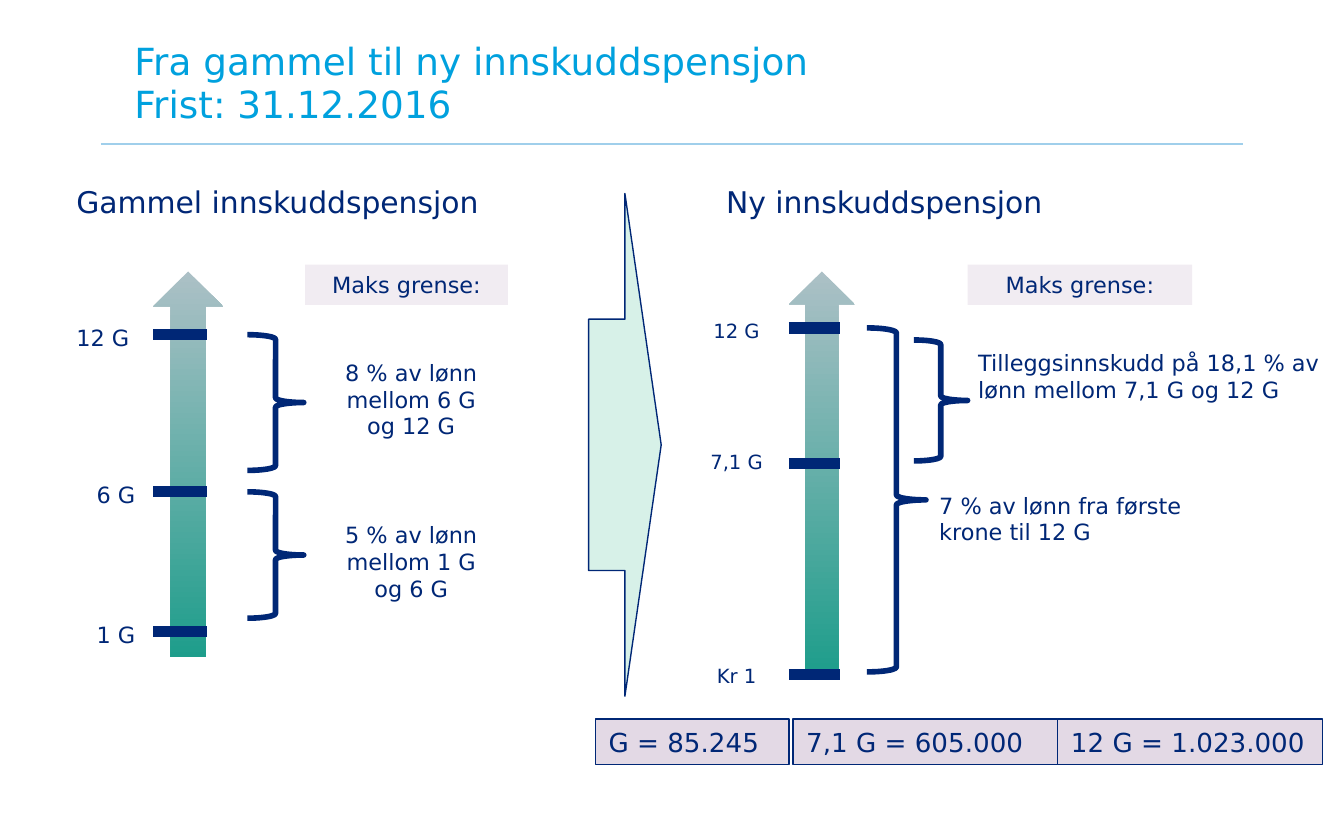
"""Build a slide comparing the old and new contribution pension limits."""
from lxml.etree import SubElement
from pptx import Presentation
from pptx.dml.color import RGBColor
from pptx.enum.shapes import MSO_CONNECTOR, MSO_SHAPE as SHAPE
from pptx.enum.text import MSO_ANCHOR as ANCHOR, MSO_AUTO_SIZE as FIT, PP_ALIGN as ALIGN
from pptx.oxml.ns import qn
from pptx.util import Inches, Pt

rgb = RGBColor.from_string
FONT, NAVY = "DejaVu Sans", "002776"


def add_label(parent, text, bounds, size=12, align=ALIGN.LEFT, fill=None, outline=None):
    place = [Inches(length) for length in bounds]
    if fill:
        label = parent.add_shape(SHAPE.RECTANGLE, *place)
        label.shadow.inherit = False
        label.fill.solid()
        label.fill.fore_color.rgb = rgb(fill)
        if outline:
            label.line.color.rgb = rgb(outline)
            label.line.width = Pt(0.75)
        else:
            label.line.fill.background()
    else:
        label = parent.add_textbox(*place)
    frame = label.text_frame
    frame.word_wrap = True
    frame.auto_size = FIT.SHAPE_TO_FIT_TEXT
    frame.vertical_anchor = ANCHOR.MIDDLE if fill else ANCHOR.TOP
    paragraph = frame.paragraphs[0]
    paragraph.alignment = align
    run = paragraph.add_run()
    run.text = text
    run.font.name, run.font.size = FONT, Pt(size)
    run.font.color.rgb = rgb(NAVY)


def add_rule(parent, left, right, y, color, width):
    rule = parent.add_connector(MSO_CONNECTOR.STRAIGHT, Inches(left), Inches(y), Inches(right), Inches(y))
    rule.line.color.rgb = rgb(color)
    rule.line.width = Pt(width)
    SubElement(rule._element.spPr, qn("a:effectLst"))


prs = Presentation()
prs.slide_width, prs.slide_height = Inches(10), Inches(6.25)
slide = prs.slides.add_slide(prs.slide_layouts[5])
add_rule(slide.shapes, 0.75, 9.25, 1.07, "A0CFEB", 1)

title = slide.shapes.title
title.left, title.top, title.width, title.height = Inches(0.72), Inches(0.31), Inches(7.61), Inches(0.5)
heading = title.text_frame
heading.auto_size = FIT.NONE
heading.vertical_anchor = ANCHOR.TOP
heading.margin_left = heading.margin_right = Inches(0.28)
heading.margin_top, heading.margin_bottom = 0, Inches(0.04)
heading_lines = heading.paragraphs[0]
heading_lines.alignment = ALIGN.LEFT
heading_lines.line_spacing = 0.95
for index, text in enumerate(["Fra gammel til ny innskuddspensjon", "Frist: 31.12.2016"]):
    if index:
        heading_lines.add_line_break()
    run = heading_lines.add_run()
    run.text = text
    run.font.name, run.font.size = FONT, Pt(20)
    run.font.color.rgb = rgb("00A1DE")

transition = slide.shapes.add_shape(SHAPE.RIGHT_ARROW, Inches(4.38), Inches(1.44), Inches(0.54), Inches(3.74))
transition.shadow.inherit = False
transition.fill.solid()
transition.fill.fore_color.rgb = rgb("D7F1E8")
transition.line.color.rgb = rgb(NAVY)
transition.line.width = Pt(0.75)

schemes = [
    {
        "scale": (1.14, 2.02, 0.52, 2.87),
        "ticks": (1.14, 1.54, [2.49, 3.66, 4.7]),
        "braces": [(1.84, 2.49, 0.42, 1.01), (1.84, 3.66, 0.42, 0.94)],
        "name": ("Gammel innskuddspensjon", (0.47, 1.32, 3.22, 0.57), 16),
        "limit": (2.27, 1.97, 1.51, 0.3),
        "labels": [
            ("12 G", (0.47, 2.36, 0.66, 0.26)),
            ("6 G", (0.62, 3.53, 0.51, 0.26)),
            ("1 G", (0.62, 4.57, 0.51, 0.26)),
            ("8 % av lønn mellom 6 G og 12 G", (2.44, 2.62, 1.24, 0.71), 12, ALIGN.CENTER),
            ("5 % av lønn mellom 1 G og 6 G", (2.44, 3.83, 1.24, 0.61), 12, ALIGN.CENTER),
        ],
    },
    {
        "scale": (5.87, 2.02, 0.49, 3),
        "ticks": (5.87, 6.25, [2.44, 3.45, 5.02]),
        "braces": [(6.8, 2.53, 0.4, 0.9), (6.45, 2.44, 0.44, 2.56)],
        "name": ("Ny innskuddspensjon", (4.95, 1.32, 3.26, 0.37), 16, ALIGN.CENTER),
        "limit": (7.2, 1.97, 1.67, 0.3),
        "labels": [
            ("12 G", (5.09, 2.32, 0.78, 0.25), 10.5, ALIGN.CENTER),
            ("7,1 G", (5.09, 3.3, 0.78, 0.25), 10.5, ALIGN.CENTER),
            ("Kr 1", (5.09, 4.89, 0.78, 0.3), 10.5, ALIGN.CENTER),
            ("Tilleggsinnskudd på 18,1 % av lønn mellom 7,1 G og 12 G", (7.18, 2.55, 2.82, 0.5)),
            ("7 % av lønn fra første krone til 12 G", (6.89, 3.61, 2.24, 0.5)),
        ],
    },
]

for scheme in schemes:
    parts = slide.shapes.add_group_shape().shapes
    scale = parts.add_shape(SHAPE.UP_ARROW, *[Inches(length) for length in scheme["scale"]])
    scale.shadow.inherit = False
    scale.line.fill.background()
    scale.fill.gradient()
    scale.fill.gradient_angle = 270
    for stop, color, position in zip(scale.fill.gradient_stops, ["ACC0C6", "1E9D8B"], [0, 1]):
        stop.color.rgb = rgb(color)
        stop.position = position
    left, right, heights = scheme["ticks"]
    for y in heights:
        add_rule(parts, left, right, y, NAVY, 6)
    for bounds in scheme["braces"]:
        brace = parts.add_shape(SHAPE.RIGHT_BRACE, *[Inches(length) for length in bounds])
        brace.shadow.inherit = False
        brace.fill.background()
        brace.line.color.rgb = rgb(NAVY)
        brace.line.width = Pt(3)
    add_label(parts, "Maks grense:", scheme["limit"], align=ALIGN.CENTER, fill="F1ECF2")
    for label in [scheme["name"], *scheme["labels"]]:
        add_label(parts, *label)

amounts = [("G = 85.245", 4.43, 1.44), ("7,1 G = 605.000", 5.9, 1.97), ("12 G = 1.023.000", 7.87, 1.97)]
for text, left, width in amounts:
    add_label(slide.shapes, text, (left, 5.35, width, 0.34), 14, fill="E3D9E5", outline=NAVY)

prs.save("out.pptx")
